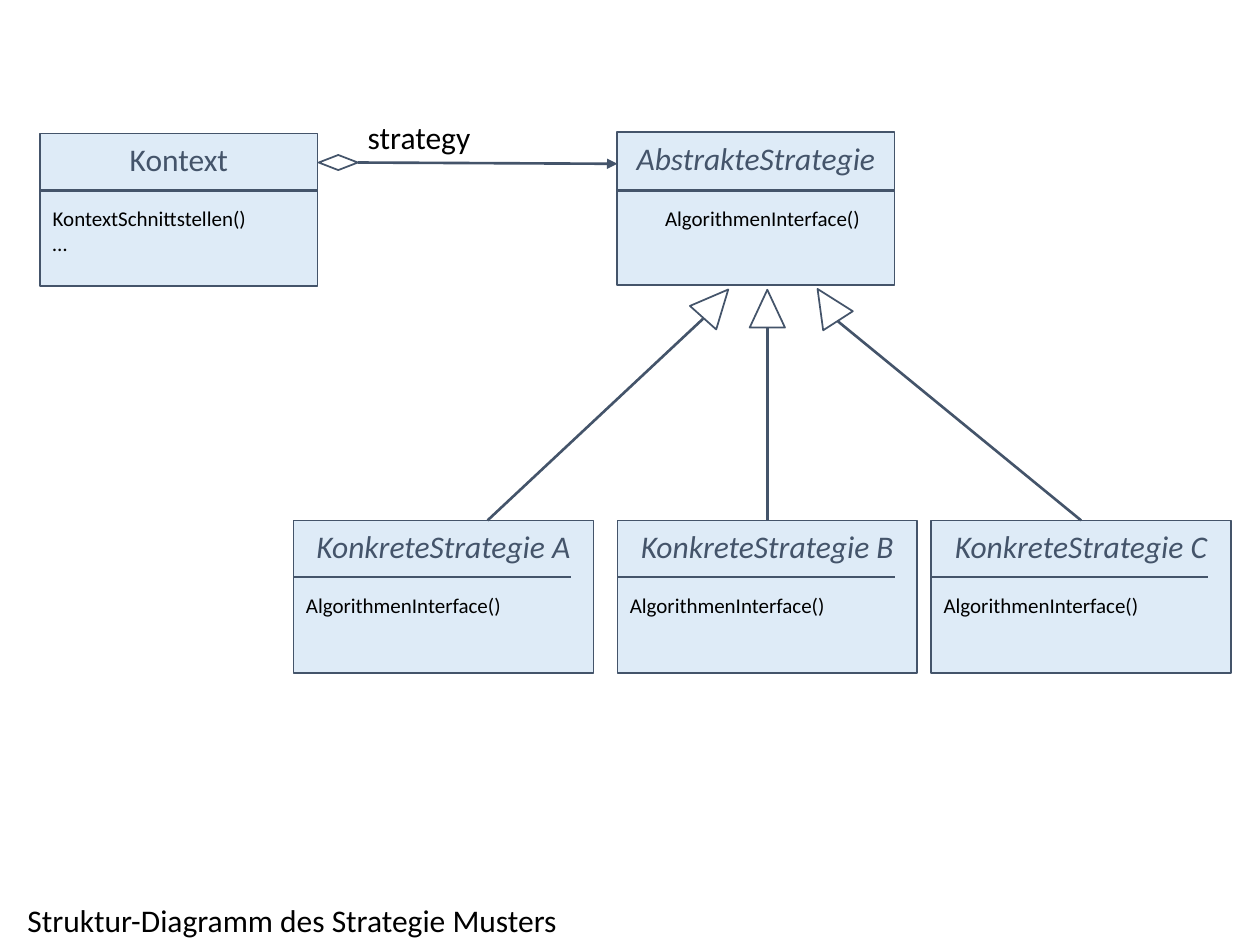
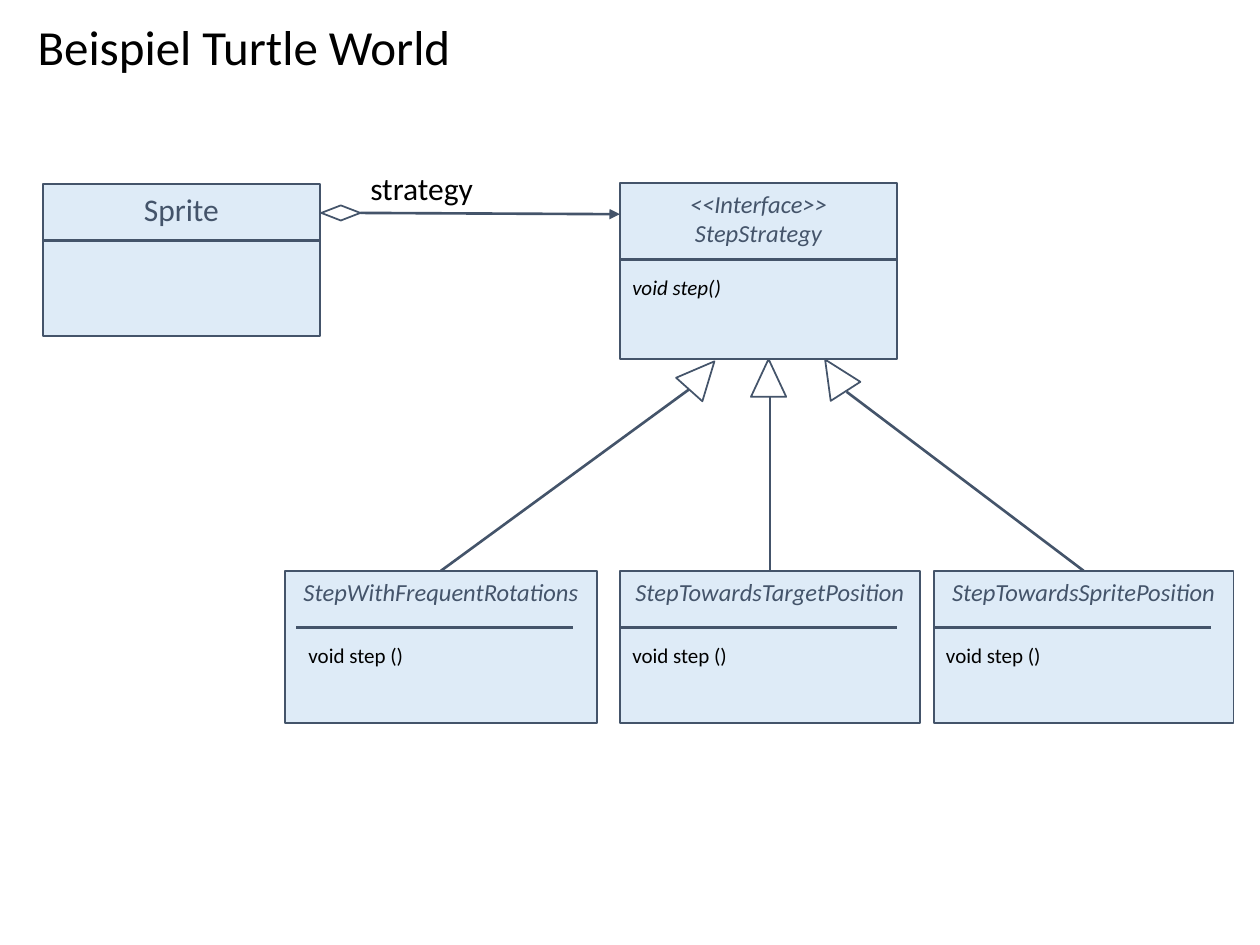
import pptx
import pptx.dml.color
import pptx.enum.shapes
import pptx.enum.text
import pptx.oxml
import pptx.oxml.ns
import pptx.util
from pptx.util import Inches

COLORS = {"box": "DEEBF7", "line": "44546A", "text": "000000"}
FONT = "Calibri"
SHAPES = pptx.enum.shapes.MSO_SHAPE
RULE_WIDTH = 2.2
HEAD_ANGLES = [41.9, 0, 327.3]

# Class boxes: left, top, width, height, title lines, title size, italic title,
# rule left, rule drop, member left, member lines, italic members
DIAGRAMS = [
    {
        "classes": [
            (0.32, 1.06, 2.2, 1.21, ["Kontext"], 18, False,
             0.32, 0.45, 0.32, ["KontextSchnittstellen()", "…"], False),
            (4.9, 1.05, 2.2, 1.21, ["AbstrakteStrategie"], 18, True,
             4.9, 0.46, 5.18, ["AlgorithmenInterface()"], False),
        ] + [
            (left, 4.13, 2.38, 1.21, [f"KonkreteStrategie {letter}"], 18, True,
             left, 0.45, left, ["AlgorithmenInterface()"], False)
            for left, letter in [(2.33, "A"), (4.9, "B"), (7.39, "C")]
        ],
        "diamond": (2.53, 1.23),
        # Line start x, line end, triangle corner
        "inheritance": [
            (3.87, (5.58, 2.53), (5.54, 2.26)),
            (6.09, (6.09, 2.6), (5.95, 2.3)),
            (8.58, (6.65, 2.55), (6.43, 2.27)),
        ],
        "caption": (0.12, 7.1, 5.77, 0.4, "Struktur-Diagramm des Strategie Musters", 18),
    },
    {
        "classes": [
            (0.34, 1.46, 2.2, 1.21, ["Sprite"], 18, False,
             0.34, 0.45, 0.34, [], False),
            (4.92, 1.45, 2.2, 1.4, ["<<Interface>>", "StepStrategy"], 14, True,
             4.92, 0.61, 4.92, ["void step()"], True),
        ] + [
            (left, 4.53, width, 1.21, [title], 14, True,
             rule_left, 0.45, rule_left, ["void step ()"], False)
            for left, width, rule_left, title in [
                (2.26, 2.48, 2.35, "StepWithFrequentRotations"),
                (4.92, 2.38, 4.92, "StepTowardsTargetPosition"),
                (7.41, 2.38, 7.41, "StepTowardsSpritePosition"),
            ]
        ],
        "diamond": (2.55, 1.63),
        "inheritance": [
            (3.5, (5.47, 3.09), (5.43, 2.83)),
            (6.11, (6.11, 3.15), (5.96, 2.85)),
            (8.6, (6.72, 3.11), (6.49, 2.83)),
        ],
        "caption": (0.2, 0.08, 4.63, 0.57, "Beispiel Turtle World", 28),
    },
]


def write(shape, lines, size, color, italic=False, centered=False, wrap=True):
    """Fill a shape with one paragraph per line, starting at its top."""
    frame = shape.text_frame
    frame.word_wrap = wrap
    frame.vertical_anchor = pptx.enum.text.MSO_ANCHOR.TOP
    for index, line in enumerate(lines):
        paragraph = frame.add_paragraph() if index else frame.paragraphs[0]
        if centered:
            paragraph.alignment = pptx.enum.text.PP_ALIGN.CENTER
        run = paragraph.add_run()
        run.text = line
        run.font.name = FONT
        run.font.size = pptx.util.Pt(size)
        run.font.italic = italic
        run.font.color.rgb = pptx.dml.color.RGBColor.from_string(COLORS[color])


def draw(slide, kind, start, extent, fill=None):
    """Add a preset shape of the given size, or a line to the given end if kind is None."""
    if kind is None:
        shape = slide.shapes.add_connector(
            pptx.enum.shapes.MSO_CONNECTOR.STRAIGHT, *map(Inches, start + extent))
        properties = shape._element.spPr
        shape.line.width = pptx.util.Pt(1.5)
    else:
        shape = slide.shapes.add_shape(kind, *map(Inches, start + extent))
        shape.shadow.inherit = False
        shape.line.width = pptx.util.Pt(1)
        if fill:
            shape.fill.solid()
            shape.fill.fore_color.rgb = pptx.dml.color.RGBColor.from_string(COLORS[fill])
        else:
            shape.fill.background()
    shape.line.color.rgb = pptx.dml.color.RGBColor.from_string(COLORS["line"])
    if kind is None:
        properties.append(pptx.oxml.parse_xml(
            f"<a:effectLst {pptx.oxml.ns.nsdecls('a')}/>"))
    return shape


presentation = pptx.Presentation()
presentation.slide_width = Inches(10)
presentation.slide_height = Inches(7.5)

for diagram in DIAGRAMS:
    slide = presentation.slides.add_slide(presentation.slide_layouts[6])

    boxes = []
    for (left, top, width, height, title, size, italic, rule_left, rule_drop,
         member_left, members, member_italic) in diagram["classes"]:
        box = draw(slide, SHAPES.RECTANGLE, (left, top), (width, height), "box")
        write(box, title, size, "line", italic, centered=True)
        boxes.append(box)
        rule_top = top + rule_drop
        draw(slide, None, (rule_left, rule_top), (rule_left + RULE_WIDTH, rule_top))
        if members:
            member_box = slide.shapes.add_textbox(
                Inches(member_left), Inches(rule_top + 0.07),
                Inches(1.76), Inches(0.1 + 0.2 * len(members)))
            write(member_box, members, 12, "text", member_italic, wrap=False)

    # Aggregation from the context to the strategy
    left, top = diagram["diamond"]
    diamond = draw(slide, SHAPES.DIAMOND, (left, top), (0.31, 0.12))
    arrow = draw(slide, None, (left + 0.31, top + 0.06), (left + 2.37, top + 0.07))
    arrow.begin_connect(diamond, 3)
    arrow.line._get_or_add_ln().append(pptx.oxml.parse_xml(
        f'<a:tailEnd {pptx.oxml.ns.nsdecls("a")} type="triangle"/>'))
    role = slide.shapes.add_textbox(
        Inches(left + 0.29), Inches(top - 0.34), Inches(1.02), Inches(0.4))
    write(role, ["strategy"], 18, "text", wrap=False)

    # Inheritance from each concrete strategy
    for box, angle, (start_x, end, corner) in zip(
            boxes[2:], HEAD_ANGLES, diagram["inheritance"]):
        line = draw(slide, None, (start_x, box.top.inches), end)
        if abs(start_x - (box.left + box.width / 2) / Inches(1)) < 0.01:
            line.begin_connect(box, 0)
        head = draw(slide, SHAPES.ISOSCELES_TRIANGLE, corner, (0.28, 0.3))
        head.rotation = angle

    left, top, width, height, text, size = diagram["caption"]
    caption = slide.shapes.add_textbox(*map(Inches, (left, top, width, height)))
    write(caption, [text], size, "text")

presentation.save("out.pptx")
